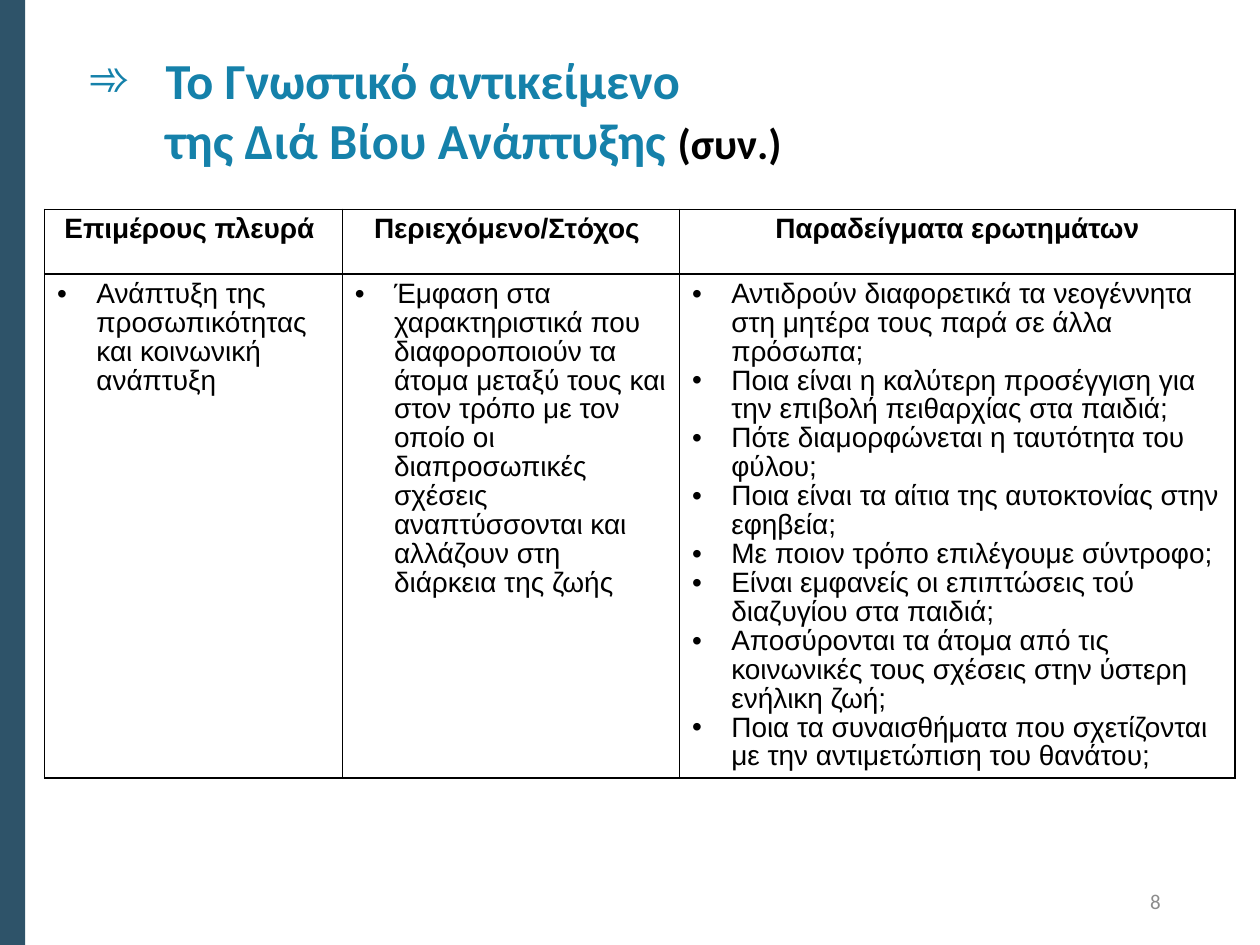
from lxml.etree import SubElement
from pptx import Presentation
from pptx.dml.color import RGBColor
from pptx.enum.shapes import MSO_SHAPE as Preset
from pptx.enum.text import MSO_ANCHOR as Anchor, PP_ALIGN as Align
from pptx.oxml.ns import qn
from pptx.util import Cm, Pt

TITLE_LINES = ["Το Γνωστικό αντικείμενο", "της Διά Βίου Ανάπτυξης "]
TITLE_SUFFIX = "(συν.)"
PAGE_NUMBER = "8"
COLUMNS = [
    ("Επιμέρους πλευρά ", 6.0, [
        "Ανάπτυξη της προσωπικότητας και κοινωνική ανάπτυξη",
    ]),
    ("Περιεχόμενο/Στόχος ", 6.8, [
        "Έμφαση στα χαρακτηριστικά που διαφοροποιούν τα άτομα μεταξύ τους και "
        "στον τρόπο με τον οποίο οι διαπροσωπικές σχέσεις αναπτύσσονται και "
        "αλλάζουν στη διάρκεια της ζωής",
    ]),
    ("Παραδείγματα ερωτημάτων", 11.2, [
        "Αντιδρούν διαφορετικά τα νεογέννητα στη μητέρα τους παρά σε άλλα πρόσωπα;",
        "Ποια είναι η καλύτερη προσέγγιση για την επιβολή πειθαρχίας στα παιδιά;",
        "Πότε διαμορφώνεται η ταυτότητα του φύλου;",
        "Ποια είναι τα αίτια της αυτοκτονίας στην εφηβεία;",
        "Με ποιον τρόπο επιλέγουμε σύντροφο;",
        "Είναι εμφανείς οι επιπτώσεις τού διαζυγίου στα παιδιά;",
        "Αποσύρονται τα άτομα από τις κοινωνικές τους σχέσεις στην ύστερη ενήλικη ζωή;",
        "Ποια τα συναισθήματα που σχετίζονται με την αντιμετώπιση του θανάτου;",
    ]),
]
ROW_HEIGHTS = [1.3, 10.0]
BLACK = "000000"
BORDER_WIDTH = Pt(0.96)

TITLE_FONT = {"name": "Calibri", "size": Pt(28.8), "bold": True, "color": "1581AA"}
SUFFIX_FONT = TITLE_FONT | {"size": Pt(24.3), "color": BLACK}
BODY_FONT = {"name": "Arial", "size": Pt(16), "bold": False, "color": BLACK}
HEADER_FONT = BODY_FONT | {"bold": True}
NUMBER_FONT = {"name": "Calibri", "size": Pt(12), "color": "8C8C8C"}
HEADER_PARAGRAPH = {"alignment": Align.CENTER, "line_spacing": 0.93}
BODY_PARAGRAPH = {"alignment": Align.LEFT, "line_spacing": 0.93}


def rgb(value):
    return RGBColor.from_string(value)


def set_attributes(target, values):
    for name, value in values.items():
        setattr(target, name, value)


def add_text(paragraph, text, font):
    run = paragraph.add_run()
    run.text = text
    set_attributes(run.font, {k: v for k, v in font.items() if k != "color"})
    run.font.color.rgb = rgb(font["color"])


def add_bullet(paragraph, character, indent):
    properties = paragraph._p.get_or_add_pPr()
    properties.set("marL", str(indent))
    properties.set("indent", str(-indent))
    SubElement(properties, qn("a:buFont"), typeface="Arial")
    SubElement(properties, qn("a:buChar"), char=character)


def add_borders(cell):
    properties = cell._tc.get_or_add_tcPr()
    for side in ("lnL", "lnR", "lnT", "lnB"):
        line = SubElement(properties, qn(f"a:{side}"), w=str(BORDER_WIDTH))
        fill = SubElement(line, qn("a:solidFill"))
        SubElement(fill, qn("a:srgbClr"), val=BLACK)


def fill_cell(cell, texts, paragraph_format, font, bullet=None):
    add_borders(cell)
    cell.fill.background()
    frame = cell.text_frame
    for index, text in enumerate(texts):
        paragraph = frame.add_paragraph() if index else frame.paragraphs[0]
        set_attributes(paragraph, paragraph_format)
        if bullet:
            add_bullet(paragraph, bullet, Cm(0.79))
        add_text(paragraph, text, font)


def add_text_box(slide, left, top, width, height, anchor):
    box = slide.shapes.add_textbox(Cm(left), Cm(top), Cm(width), Cm(height))
    set_attributes(box.text_frame, {"word_wrap": True, "vertical_anchor": anchor})
    return box.text_frame.paragraphs[0]


def add_side_bar(slide, height):
    bar = slide.shapes.add_shape(Preset.RECTANGLE, 0, 0, Cm(0.51), height)
    bar.shadow.inherit = False
    bar.fill.solid()
    bar.fill.fore_color.rgb = rgb("2E5369")
    bar.line.fill.background()


def add_title(slide):
    title = add_text_box(slide, 1.52, 0.86, 22.2, 2.46, Anchor.TOP)
    add_bullet(title, "➾", Cm(1.57))
    for index, line in enumerate(TITLE_LINES):
        if index:
            title.add_line_break()
        add_text(title, line, TITLE_FONT)
    add_text(title, TITLE_SUFFIX, SUFFIX_FONT)


def add_content_table(slide):
    width = sum(column[1] for column in COLUMNS)
    table = slide.shapes.add_table(
        len(ROW_HEIGHTS), len(COLUMNS),
        Cm(0.9), Cm(4.22), Cm(width), Cm(sum(ROW_HEIGHTS))).table
    set_attributes(table, {"first_row": False, "horz_banding": False})
    for row, height in zip(table.rows, ROW_HEIGHTS):
        row.height = Cm(height)
    for index, (header, column_width, items) in enumerate(COLUMNS):
        table.columns[index].width = Cm(column_width)
        fill_cell(table.cell(0, index), [header], HEADER_PARAGRAPH, HEADER_FONT)
        fill_cell(table.cell(1, index), items, BODY_PARAGRAPH, BODY_FONT, "•")


def add_page_number(slide):
    number = add_text_box(slide, 17.93, 17.65, 5.72, 1.02, Anchor.MIDDLE)
    number.alignment = Align.RIGHT
    add_text(number, PAGE_NUMBER, NUMBER_FONT)


def main():
    presentation = Presentation()
    set_attributes(presentation, {"slide_width": Cm(25.4), "slide_height": Cm(19.05)})
    slide = presentation.slides.add_slide(presentation.slide_layouts[6])
    add_side_bar(slide, presentation.slide_height)
    add_content_table(slide)
    add_title(slide)
    add_page_number(slide)
    presentation.save("out.pptx")


if __name__ == "__main__":
    main()
